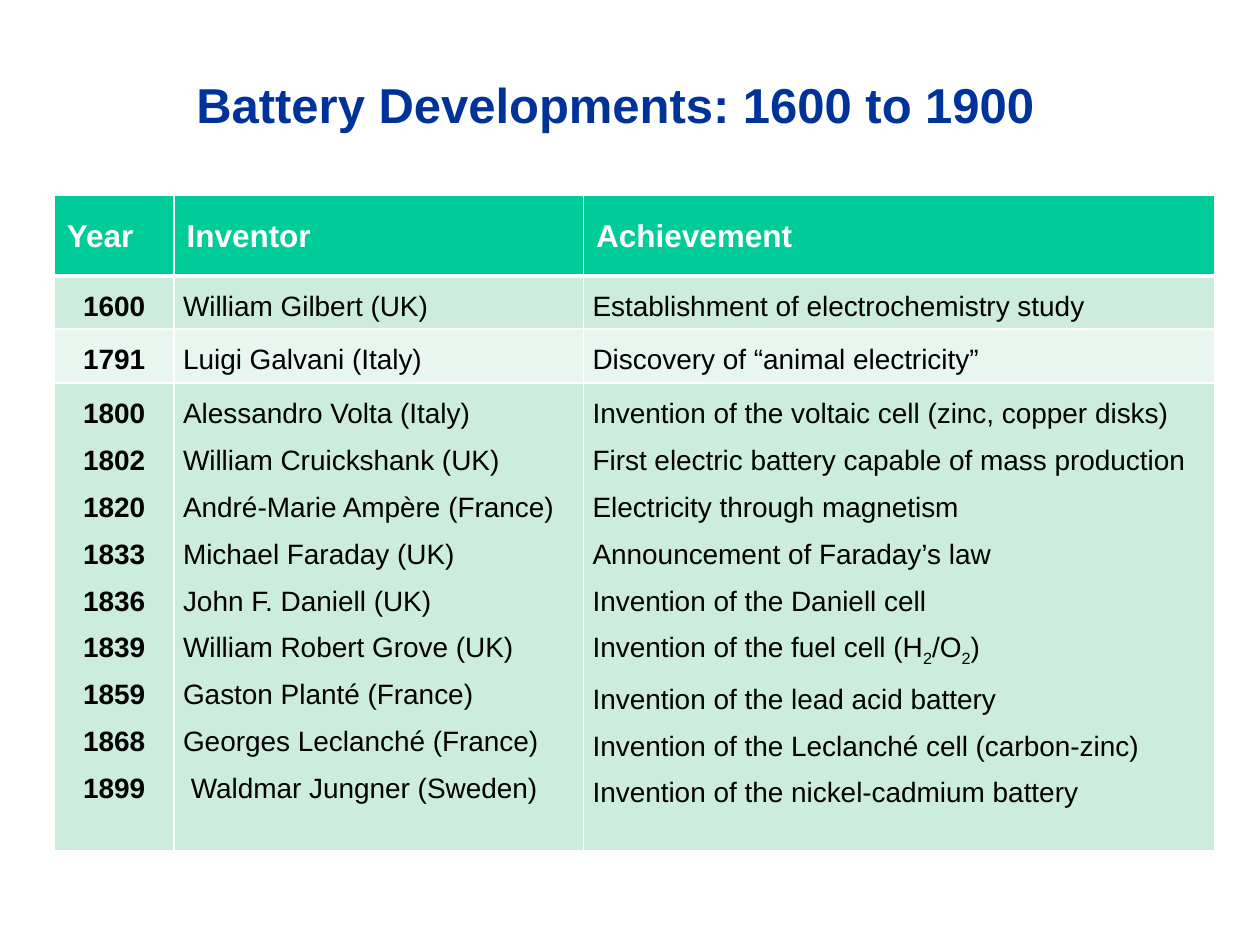
import pptx
import pptx.dml.color
import pptx.enum.text
import pptx.oxml
import pptx.oxml.ns
import pptx.util

Pt = pptx.util.Pt
RGBColor = pptx.dml.color.RGBColor
PP_ALIGN = pptx.enum.text.PP_ALIGN

NAVY = RGBColor(0x00, 0x33, 0x99)
GREEN = RGBColor(0x00, 0xCC, 0x99)
MINT = RGBColor(0xCC, 0xEC, 0xDE)
PALE = RGBColor(0xE7, 0xF6, 0xEF)
WHITE = RGBColor(0xFF, 0xFF, 0xFF)
BLACK = RGBColor(0x00, 0x00, 0x00)
FONT = "Arial"

TITLE = "Battery Developments: 1600 to 1900"
HEADINGS = ("Year", "Inventor", "Achievement")
FUEL_CELL = ("Invention of the fuel cell (H", "2", "/O", "2", ")")
PERIODS = [
    [("1600", "William Gilbert (UK)", "Establishment of electrochemistry study")],
    [("1791", "Luigi Galvani (Italy)", "Discovery of “animal electricity”")],
    [
        ("1800", "Alessandro Volta (Italy)", "Invention of the voltaic cell (zinc, copper disks)"),
        ("1802", "William Cruickshank (UK)", "First electric battery capable of mass production"),
        ("1820", "André-Marie Ampère (France)", "Electricity through magnetism"),
        ("1833", "Michael Faraday (UK)", "Announcement of Faraday’s law"),
        ("1836", "John F. Daniell (UK)", "Invention of the Daniell cell"),
        ("1839", "William Robert Grove (UK)", FUEL_CELL),
        ("1859", "Gaston Planté (France)", "Invention of the lead acid battery"),
        ("1868", "Georges Leclanché (France)", "Invention of the Leclanché cell (carbon-zinc)"),
        ("1899", " Waldmar Jungner (Sweden)", "Invention of the nickel-cadmium battery"),
    ],
]
COLUMN_WIDTHS = (68.4, 234, 360.7)
ROW_HEIGHTS = (46.1, 30.2, 31, 267.1)


def style_font(font, size, color, bold):
    """Apply the slide's typeface with the given look."""
    font.name = FONT
    font.size = Pt(size)
    font.color.rgb = color
    font.bold = bold


def add_borders(cell, bottom):
    """Draw white cell borders, with the given bottom width in points."""
    properties = cell._tc.get_or_add_tcPr()
    widths = {"lnL": 1, "lnR": 1, "lnT": 1, "lnB": bottom}
    for position, (edge, width) in enumerate(widths.items()):
        properties.insert(position, pptx.oxml.parse_xml(
            f'<a:{edge} {pptx.oxml.ns.nsdecls("a")} w="{Pt(width)}">'
            f'<a:solidFill><a:srgbClr val="{WHITE}"/></a:solidFill></a:{edge}>'))


def fill_heading(cell, heading):
    """Write one heading cell."""
    cell.fill.solid()
    cell.fill.fore_color.rgb = GREEN
    add_borders(cell, 3)
    cell.text_frame.text = heading
    paragraph = cell.text_frame.paragraphs[0]
    paragraph.line_spacing = 1.5
    paragraph.space_after = Pt(6)
    style_font(paragraph.runs[0].font, 18, WHITE, True)


def fill_entries(cell, entries, color, is_year, spacing):
    """Write one paragraph per entry; alternate parts of a tuple are subscripts."""
    cell.fill.solid()
    cell.fill.fore_color.rgb = color
    add_borders(cell, 1)
    cell.margin_left = cell.margin_right = Pt(5.2)
    cell.margin_top = cell.margin_bottom = 0
    frame = cell.text_frame
    for index, entry in enumerate(entries):
        paragraph = frame.add_paragraph() if index else frame.paragraphs[0]
        if index:
            paragraph.space_before = Pt(5)
        else:
            paragraph.line_spacing = 1.5
        paragraph.space_after = Pt(spacing)
        paragraph.alignment = PP_ALIGN.CENTER if is_year else PP_ALIGN.LEFT
        parts = entry if isinstance(entry, tuple) else (entry,)
        for part_index, part in enumerate(parts):
            run = paragraph.add_run()
            run.text = part
            style_font(run.font, 16, BLACK, is_year)
            if part_index % 2:
                run._r.get_or_add_rPr().set("baseline", "-25000")


def add_title(slide, left, top, width, height):
    """Place the slide title."""
    frame = slide.shapes.add_textbox(Pt(left), Pt(top), Pt(width), Pt(height)).text_frame
    frame.word_wrap = False
    frame.auto_size = pptx.enum.text.MSO_AUTO_SIZE.SHAPE_TO_FIT_TEXT
    frame.text = TITLE
    style_font(frame.paragraphs[0].runs[0].font, 28, NAVY, True)


def add_timeline(slide, left, top):
    """Place the table of inventors, one row per period."""
    timeline = slide.shapes.add_table(
        len(ROW_HEIGHTS), len(COLUMN_WIDTHS), Pt(left), Pt(top),
        Pt(sum(COLUMN_WIDTHS)), Pt(sum(ROW_HEIGHTS))).table
    timeline.horz_banding = False
    for row, height in zip(timeline.rows, ROW_HEIGHTS):
        row.height = Pt(height)
    for index, (width, heading) in enumerate(zip(COLUMN_WIDTHS, HEADINGS)):
        timeline.columns[index].width = Pt(width)
        fill_heading(timeline.cell(0, index), heading)
    for row_index, period in enumerate(PERIODS, start=1):
        color = MINT if row_index % 2 else PALE
        spacing = 0 if row_index == 1 else 4
        for index, entries in enumerate(zip(*period)):
            fill_entries(timeline.cell(row_index, index), entries, color, index == 0, spacing)


def main():
    """Build and save the slide."""
    deck = pptx.Presentation()
    deck.slide_width, deck.slide_height = Pt(720), Pt(540)
    slide = deck.slides.add_slide(deck.slide_layouts[6])
    add_timeline(slide, 31, 111.6)
    add_title(slide, 105.1, 38.9, 507.6, 41)
    deck.save("out.pptx")


if __name__ == "__main__":
    main()
